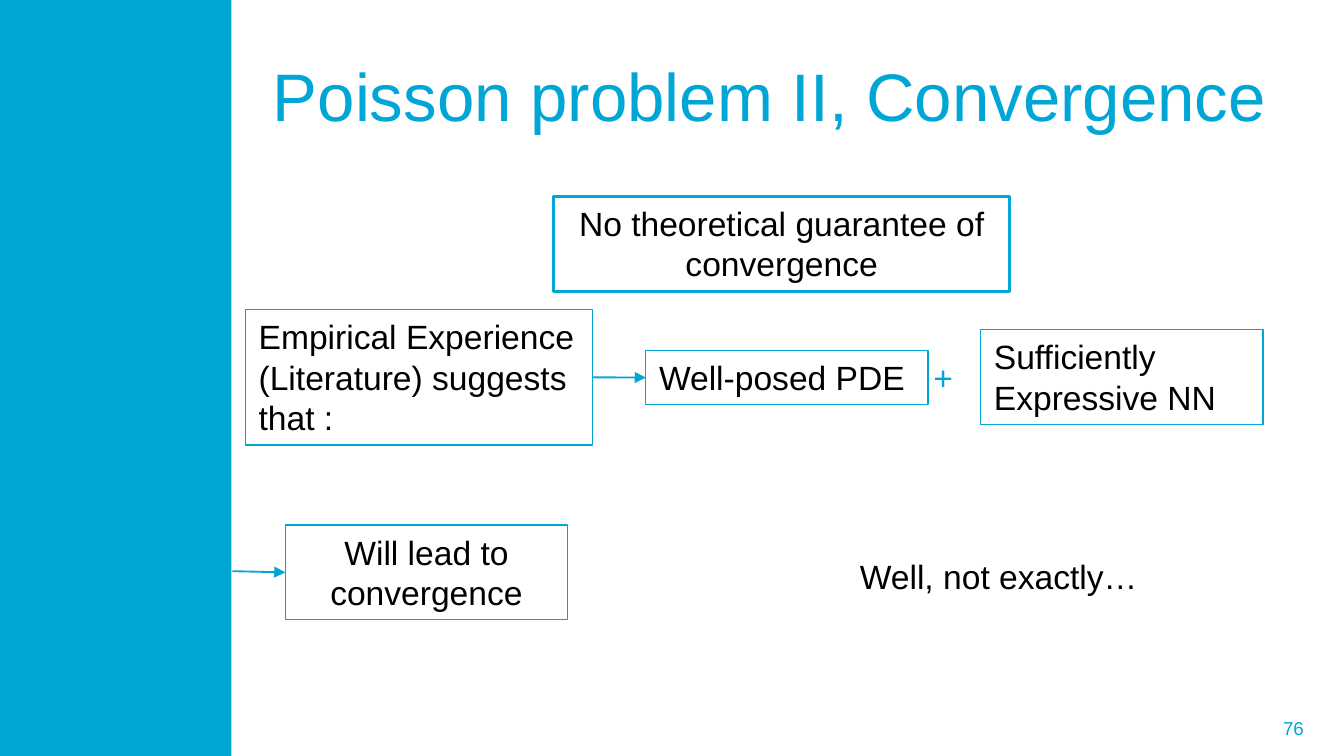
"""Build the slide on convergence of the second Poisson problem."""
from dataclasses import dataclass

from lxml import etree
from pptx import Presentation
from pptx import util as u
from pptx.dml.color import RGBColor
from pptx.enum import shapes, text
from pptx.oxml.ns import qn

LEFT, CENTER, RIGHT = text.PP_ALIGN.LEFT, text.PP_ALIGN.CENTER, text.PP_ALIGN.RIGHT
TOP, MIDDLE = text.MSO_ANCHOR.TOP, text.MSO_ANCHOR.MIDDLE


@dataclass(frozen=True)
class Theme:
    """Colours, font and type sizes."""
    accent: str = "00A6D6"
    ink: str = "000000"
    font: str = "Arial"
    title: float = 36
    body: float = 18
    number: float = 10


class SlideBuilder:
    """Hold the theme and the current page, and draw its elements."""

    def __init__(self, page, theme):
        self.page = page
        self.theme = theme

    def set_words(self, box, words, size, color, align=LEFT, anchor=TOP):
        """Fill a box with one paragraph."""
        frame = box.text_frame
        frame.word_wrap = True
        frame.auto_size = text.MSO_AUTO_SIZE.NONE
        frame.vertical_anchor = anchor
        para = frame.paragraphs[0]
        para.alignment = align
        span = para.add_run()
        span.text = words
        span.font.name = self.theme.font
        span.font.size = u.Pt(size)
        span.font.color.rgb = RGBColor.from_string(color)

    def rectangle(self, place):
        """Add a plain rectangle without shadow."""
        box = self.page.shapes.add_shape(shapes.MSO_SHAPE.RECTANGLE, *map(u.Pt, place))
        box.shadow.inherit = False
        return box

    def sidebar(self, place):
        """Add the solid accent band."""
        band = self.rectangle(place)
        band.fill.solid()
        band.fill.fore_color.rgb = RGBColor.from_string(self.theme.accent)
        band.line.fill.background()

    def title(self, words, place):
        """Place and format the title placeholder."""
        box = self.page.shapes.title
        box.left, box.top, box.width, box.height = map(u.Pt, place)
        self.set_words(box, words, self.theme.title, self.theme.accent, anchor=MIDDLE)

    def framed(self, words, place, align=LEFT, weight=0.75):
        """Add an outlined box with text."""
        box = self.rectangle(place)
        box.fill.background()
        box.line.color.rgb = RGBColor.from_string(self.theme.accent)
        box.line.width = u.Pt(weight)
        self.set_words(box, words, self.theme.body, self.theme.ink, align)
        return box

    def label(self, words, place, size, color, align=LEFT, anchor=TOP):
        """Add text without an outline."""
        box = self.page.shapes.add_textbox(*map(u.Pt, place))
        self.set_words(box, words, size, color, align, anchor)

    def arrow(self, start, end, target, source=None):
        """Add an arrow to the left side of the target box."""
        line = self.page.shapes.add_connector(
            shapes.MSO_CONNECTOR.STRAIGHT, *map(u.Pt, (*start, *end)))
        if source is not None:
            line.begin_connect(source, 3)
        line.end_connect(target, 1)
        line.line.color.rgb = RGBColor.from_string(self.theme.accent)
        line.line.width = u.Pt(1)
        properties = line._element.spPr
        etree.SubElement(properties.find(qn("a:ln")), qn("a:tailEnd"), type="triangle")
        etree.SubElement(properties, qn("a:effectLst"))


def main():
    """Build and save the deck."""
    deck = Presentation()
    deck.slide_width, deck.slide_height = u.Pt(720), u.Pt(405)
    theme = Theme()
    slide = SlideBuilder(deck.slides.add_slide(deck.slide_layouts[5]), theme)

    slide.label("76", (523.4, 379.4, 182.2, 21.6), theme.number, theme.accent,
                RIGHT, MIDDLE)
    slide.sidebar((0, 0, 124, 405))
    slide.title("Poisson problem II, Convergence", (139, 16.6, 559.5, 67.7))

    problem = slide.framed("Well-posed PDE", (346, 187.8, 151.2, 29))
    slide.framed("No theoretical guarantee of convergence",
                 (296.6, 105.2, 244.4, 50.9), CENTER, 1.5)
    experience = slide.framed("Empirical Experience (Literature) suggests that :",
                              (131.5, 165.8, 186, 72.7))
    slide.framed("Sufficiently Expressive NN", (525.4, 176.6, 151.2, 50.9))
    slide.arrow((317.5, 202.2), (346, 202.2), problem, experience)
    slide.label("+", (493, 187.8, 28, 29), theme.body, theme.accent)

    outcome = slide.framed("Will lead to convergence", (152.9, 281.2, 151.2, 50.9), CENTER)
    slide.arrow((124.5, 306), (152.9, 306.6), outcome)
    slide.label("Well, not exactly…", (441, 294.5, 188, 29), theme.body, theme.ink, CENTER)

    deck.save("out.pptx")


if __name__ == "__main__":
    main()
